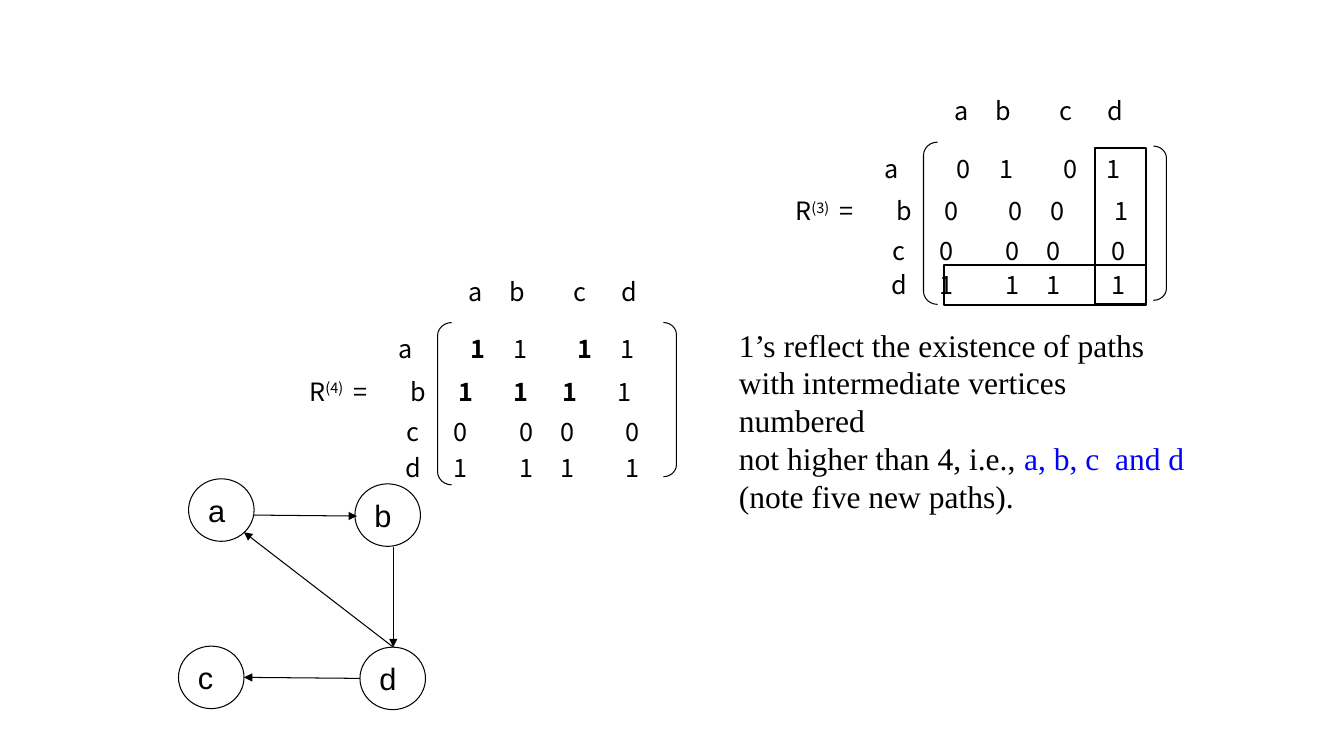
from lxml import etree
from pptx import Presentation
from pptx.dml.color import RGBColor
from pptx.enum.shapes import MSO_CONNECTOR, MSO_SHAPE
from pptx.enum.text import MSO_ANCHOR, PP_ALIGN
from pptx.oxml.ns import qn
from pptx.util import Inches, Pt

LINE = MSO_CONNECTOR.STRAIGHT
OVAL, RECT = MSO_SHAPE.OVAL, MSO_SHAPE.RECTANGLE
BRACKET = MSO_SHAPE.LEFT_BRACKET
MIDDLE, LEFT = MSO_ANCHOR.MIDDLE, PP_ALIGN.LEFT
BLACK = RGBColor(0, 0, 0)
WHITE = RGBColor(255, 255, 255)
BLUE = RGBColor(0, 0, 255)
SANS, SERIF, ARIAL = "Noto Sans CJK SC", "Times New Roman", "Arial"

HEAD = (4.71, 5.13, 5.75, 6.24)
ROW_A = (4.02, 4.74, 5.16, 5.8, 6.23)
ROW_B4 = (3.58, 4.15, 4.62, 5.17, 5.65, 6.2)
ROW_B3 = (3.58, 4.15, 4.62, 5.25, 5.67, 6.3)
ROW_CD = (4.1, 4.57, 5.22, 5.63, 6.27)

# left, top, width, label, cells, bold cell numbers, cell centres
MATRICES = [
    (0, 0, [(4.34, 3.2, 0.14, 1.61), (6.58, 3.2, 0.13, 1.53)], [
        (4.55, 2.69, 2.09, "", "abcd", (), HEAD),
        (3.58, 3.26, 2.98, "", "a1111", (1, 3), ROW_A),
        (2.97, 3.68, 3.67, "(4)", "=b1111", (2, 3, 4), ROW_B4),
        (3.83, 4.08, 2.75, "", "c0000", (), ROW_CD),
        (3.83, 4.44, 2.75, "", "d1111", (), ROW_CD),
    ]),
    (4.82, -1.79, [(4.34, 3.2, 0.14, 1.61), (6.62, 3.24, 0.13, 1.53)], [
        (4.55, 2.69, 2.09, "", "abcd", (), HEAD),
        (3.58, 3.26, 2.97, "", "a0101", (), ROW_A),
        (2.97, 3.68, 3.6, "(3)", "=b0001", (), ROW_B3),
        (3.83, 4.08, 2.75, "", "c0000", (), ROW_CD),
        (3.83, 4.41, 2.75, "", "d1111", (), ROW_CD),
    ]),
]
FRAMES = [(9.36, 2.63, 2.01, 0.4), (10.86, 1.47, 0.51, 1.55)]
NOTE = [
    [("1’s reflect the existence of paths", BLACK)],
    [("with intermediate vertices numbered", BLACK)],
    [("not higher than 4, i.e., ", BLACK), ("a, b, c  and d", BLUE)],
    [("(note five new paths).", BLACK)],
]
NODES = [("c", 1.77, 6.41), ("d", 3.57, 6.42), ("b", 3.52, 4.8), ("a", 1.87, 4.75)]
EDGES = [
    (2.52, 5.11, 3.54, 5.12),
    (3.9, 5.43, 3.9, 6.42),
    (3.9, 6.42, 2.42, 5.28),
    (3.57, 6.73, 2.42, 6.72),
]

deck = Presentation()
deck.slide_width, deck.slide_height = Inches(13.33), Inches(7.5)
slide = deck.slides.add_slide(deck.slide_layouts[6])
shapes = slide.shapes


def add_run(para, text, size, font, color=BLACK, bold=False):
    run = para.add_run()
    run.text = text
    run.font.size, run.font.name, run.font.bold = Pt(size), font, bold
    run.font.color.rgb = color
    return run


def add_box(*box):
    frame = shapes.add_textbox(*map(Inches, box)).text_frame
    frame.word_wrap = True
    return frame


def add_form(kind, box, width=0.75, fill=None):
    shape = shapes.add_shape(kind, *map(Inches, box))
    shape.shadow.inherit = False
    shape.line.color.rgb, shape.line.width = BLACK, Pt(width)
    if fill is None:
        shape.fill.background()
    else:
        shape.fill.solid()
        shape.fill.fore_color.rgb = fill
    return shape


def add_row(left, top, width, power, cells, bold, stops, dx):
    para = add_box(left, top, width, 0.4).paragraphs[0]
    tabs = etree.SubElement(para._p.get_or_add_pPr(), qn("a:tabLst"))
    for stop in stops:
        place = Inches(stop + dx - left - 0.1)
        etree.SubElement(tabs, qn("a:tab"), pos=str(place), algn="ctr")
    if power:
        add_run(para, "R", 18, SANS)
        raised = add_run(para, power, 18, SANS)
        raised._r.get_or_add_rPr().set("baseline", "30000")
    for spot, cell in enumerate(cells):
        add_run(para, "\t" + cell, 18, SANS, bold=spot in bold)


for dx, dy, sides, rows in MATRICES:
    for side, (left, top, width, height) in enumerate(sides):
        curve = add_form(BRACKET, (left + dx, top + dy, width, height))
        curve.adjustments[0] = 0.927
        if side:
            curve._element.spPr.xfrm.set("flipH", "1")
    for left, top, width, *rest in rows:
        add_row(left + dx, top + dy, width, *rest, dx)

for box in FRAMES:
    add_form(RECT, box, 1.5)

note = add_box(7.23, 3.18, 4.72, 1.58)
for spot, parts in enumerate(NOTE):
    para = note.add_paragraph() if spot else note.paragraphs[0]
    for text, color in parts:
        add_run(para, text, 22.5, SERIF, color)

for name, left, top in NODES:
    frame = add_form(OVAL, (left, top, 0.65, 0.62), fill=WHITE).text_frame
    frame.vertical_anchor = MIDDLE
    frame.paragraphs[0].alignment = LEFT
    add_run(frame.paragraphs[0], name, 22, ARIAL)

for ends in EDGES:
    edge = shapes.add_connector(LINE, *map(Inches, ends))
    edge.line.color.rgb, edge.line.width = BLACK, Pt(0.75)
    etree.SubElement(edge.line._get_or_add_ln(), qn("a:tailEnd"), type="triangle")
    etree.SubElement(edge._element.spPr, qn("a:effectLst"))

deck.save("out.pptx")
